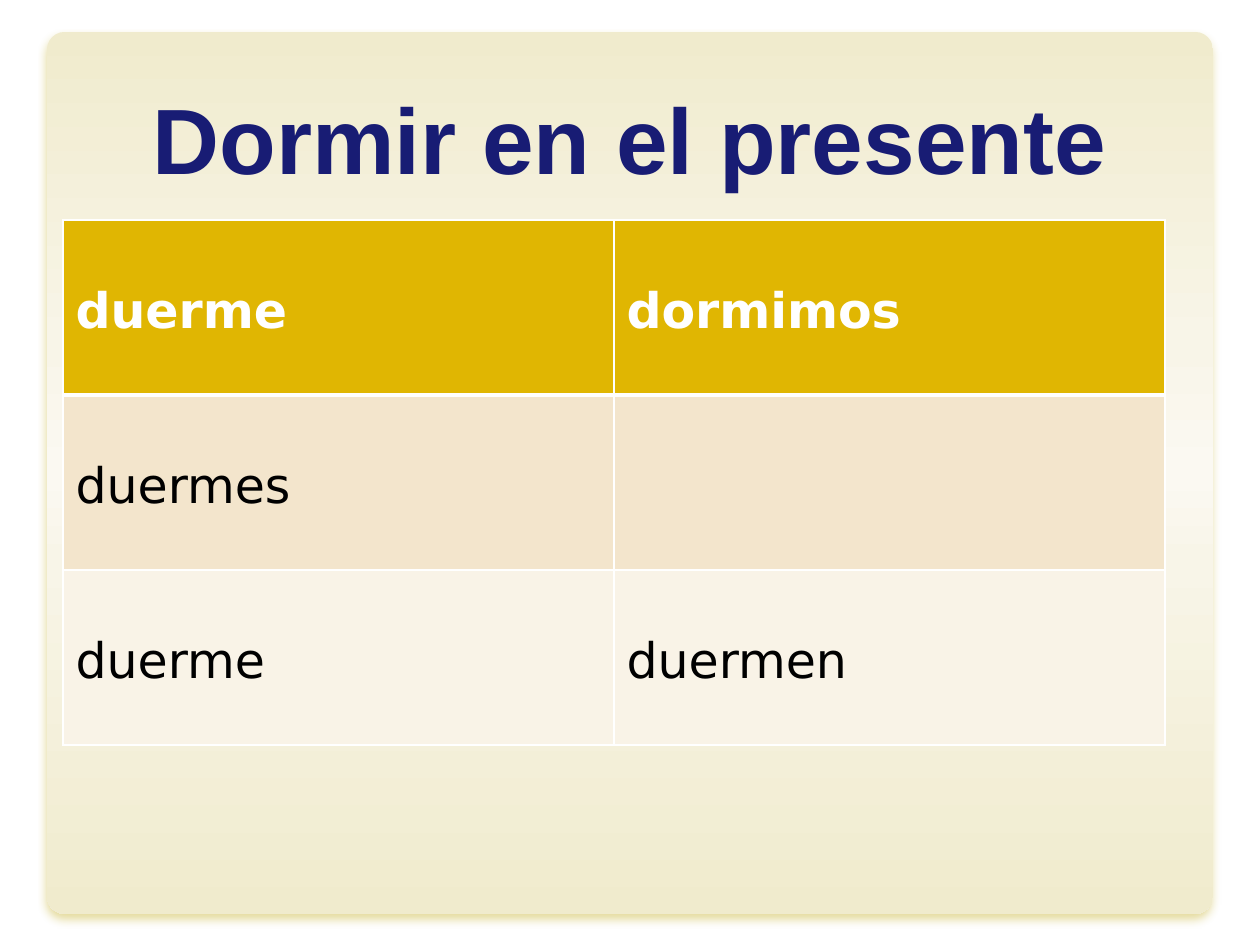
from typing import NamedTuple

from lxml.etree import SubElement as Sub
from pptx import Presentation
from pptx.dml.color import RGBColor as Rgb
from pptx.enum.shapes import MSO_SHAPE as Kind
from pptx.enum.text import MSO_ANCHOR as Anchor, PP_ALIGN as Align
from pptx.oxml.ns import qn
from pptx.util import Emu, Pt

SCALE = 914400 / 126
HUES = {
    "edge": "F0EBCD", "pale": "F8F5E8", "mid": "FBF9F2",
    "shade": "C5AF25", "title": "181C74", "white": "FFFFFF",
    "black": "000000", "gold": "E0B602", "sand": "F3E5CC", "cream": "F9F3E7",
}
STOPS = [(0, "edge"), (35, "pale"), (50, "mid"), (60, "pale"), (100, "edge")]


class Box(NamedTuple):
    x: int
    y: int
    w: int
    h: int


class Row(NamedTuple):
    words: tuple[str, str]
    fill: str
    ink: str
    bold: bool
    top: int
    base: int


ROWS = [
    Row(("duerme", "dormimos"), "gold", "white", True, 1, 3),
    Row(("duermes", ""), "sand", "black", False, 3, 1),
    Row(("duerme", "duermen"), "cream", "black", False, 1, 1),
]


def px(num: int) -> Emu:
    return Emu(round(num * SCALE))


def place(box: Box) -> list[Emu]:
    return [px(num) for num in box]


def add_run(par, text: str, font: str, size: int, hue: str, bold: bool) -> None:
    run = par.add_run()
    run.text = text
    run.font.name = font
    run.font.size = Pt(size)
    run.font.bold = bold
    run.font.color.rgb = Rgb.from_string(HUES[hue])


def add_hue(node, hue: str):
    return Sub(node, qn("a:srgbClr"), val=HUES[hue])


def draw_panel(slide, box: Box) -> None:
    panel = slide.shapes.add_shape(Kind.ROUNDED_RECTANGLE, *place(box))
    panel.adjustments[0] = 0.02
    panel.line.fill.background()
    panel.fill.gradient()
    panel.fill.gradient_angle = 270
    props = panel.element.spPr
    stops = props.find(".//" + qn("a:gsLst"))
    stops.clear()
    for pos, hue in STOPS:
        add_hue(Sub(stops, qn("a:gs"), pos=str(pos * 1000)), hue)
    panel.shadow.inherit = False
    glow = Sub(props.find(qn("a:effectLst")), qn("a:outerShdw"),
               blurRad=str(Pt(5)), dist=str(Pt(3.6)), dir="5400000",
               algn="ctr", rotWithShape="0")
    Sub(add_hue(glow, "shade"), qn("a:alpha"), val="45000")


def draw_title(slide, box: Box, text: str) -> None:
    frame = slide.shapes.add_textbox(*place(box)).text_frame
    frame.word_wrap = True
    frame.vertical_anchor = Anchor.BOTTOM
    par = frame.paragraphs[0]
    par.alignment = Align.CENTER
    add_run(par, text, "Arial", 53, "title", True)


def set_edges(cell, top: int, base: int) -> None:
    """Give the cell white borders; widths are in points."""
    props = cell._tc.get_or_add_tcPr()
    for spot, (side, wide) in enumerate(zip("LRTB", (1, 1, top, base))):
        line = Sub(props, qn(f"a:ln{side}"), w=str(Pt(wide)))
        add_hue(Sub(line, qn("a:solidFill")), "white")
        props.insert(spot, line)


def draw_table(slide, box: Box, rows: list[Row]) -> None:
    count = len(rows[0].words)
    table = slide.shapes.add_table(len(rows), count, *place(box)).table
    for r, row in enumerate(rows):
        for c, word in enumerate(row.words):
            cell = table.cell(r, c)
            cell.fill.solid()
            cell.fill.fore_color.rgb = Rgb.from_string(HUES[row.fill])
            cell.margin_top = px(63)
            set_edges(cell, row.top, row.base)
            if word:
                add_run(cell.text_frame.paragraphs[0], word, "DejaVu Sans",
                        28, row.ink, row.bold)


def main() -> None:
    deck = Presentation()
    deck.slide_width, deck.slide_height = px(1260), px(945)
    slide = deck.slides.add_slide(deck.slide_layouts[6])
    draw_panel(slide, Box(47, 32, 1166, 882))
    draw_title(slide, Box(63, 42, 1134, 157), "Dormir en el presente")
    draw_table(slide, Box(63, 220, 1102, 525), ROWS)
    deck.save("out.pptx")


if __name__ == "__main__":
    main()
